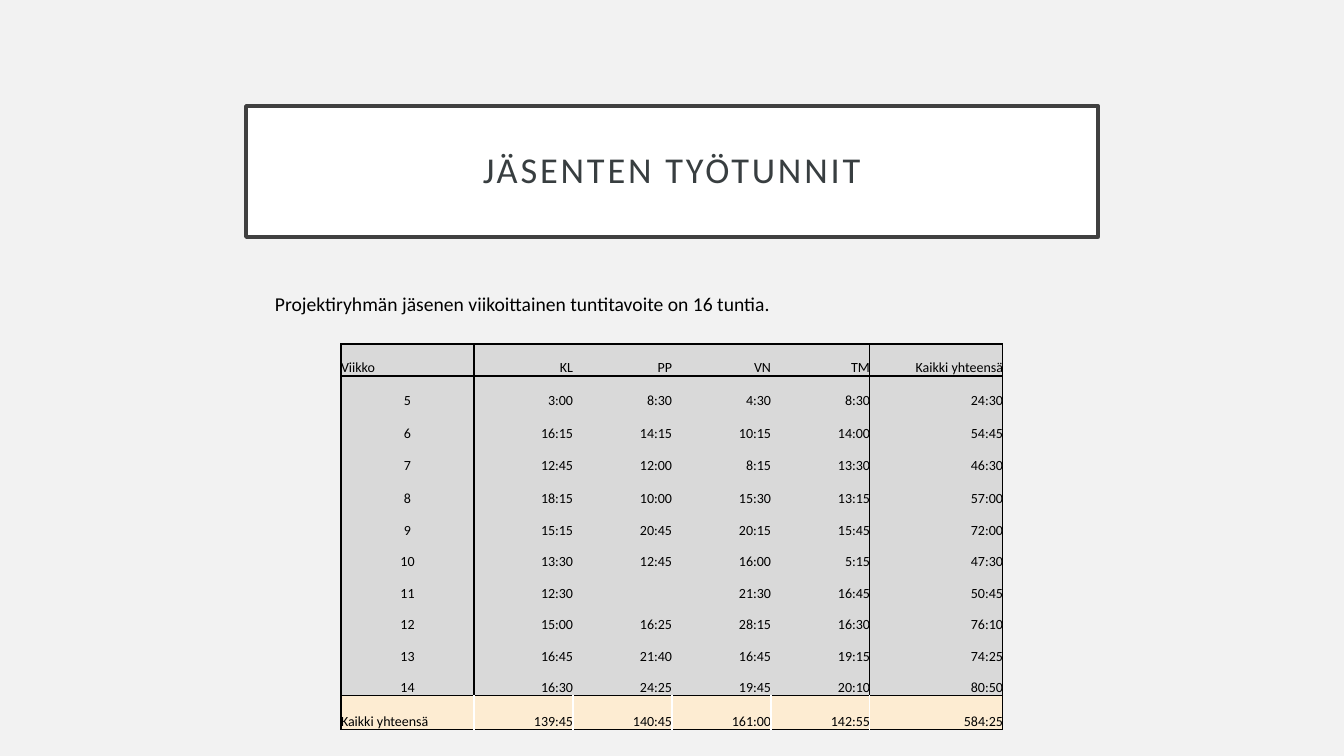
from lxml import etree
from pptx import Presentation
from pptx.dml.color import RGBColor
from pptx.enum.shapes import MSO_SHAPE
from pptx.enum.text import MSO_ANCHOR, PP_ALIGN
from pptx.oxml.ns import qn
from pptx.util import Pt

RECTANGLE = MSO_SHAPE.RECTANGLE
MIDDLE, BOTTOM = MSO_ANCHOR.MIDDLE, MSO_ANCHOR.BOTTOM
LEFT, CENTER, RIGHT = PP_ALIGN.LEFT, PP_ALIGN.CENTER, PP_ALIGN.RIGHT

SLIDE_WIDTH, SLIDE_HEIGHT = 1344, 756
EMU_PER_PX = 12192000 / SLIDE_WIDTH
FONT = "Calibri"
BLACK, WHITE = "000000", "FFFFFF"
BACKGROUND, FRAME, TITLE_TEXT = "F2F2F2", "404040", "383E40"
WEEK_FILL, TOTAL_FILL = "D9D9D9", "FDECD2"

COLUMN_WIDTHS = [133, 99, 99, 99, 99, 133]
ROW_HEIGHTS = [32, 33, 33, 32, 33, 32, 31, 32, 31, 32, 31, 34]
HOURS = [
    ["Viikko", "KL", "PP", "VN", "TM", "Kaikki yhteensä"],
    ["5", "3:00", "8:30", "4:30", "8:30", "24:30"],
    ["6", "16:15", "14:15", "10:15", "14:00", "54:45"],
    ["7", "12:45", "12:00", "8:15", "13:30", "46:30"],
    ["8", "18:15", "10:00", "15:30", "13:15", "57:00"],
    ["9", "15:15", "20:45", "20:15", "15:45", "72:00"],
    ["10", "13:30", "12:45", "16:00", "5:15", "47:30"],
    ["11", "12:30", "", "21:30", "16:45", "50:45"],
    ["12", "15:00", "16:25", "28:15", "16:30", "76:10"],
    ["13", "16:45", "21:40", "16:45", "19:15", "74:25"],
    ["14", "16:30", "24:25", "19:45", "20:10", "80:50"],
    ["Kaikki yhteensä", "139:45", "140:45", "161:00", "142:55", "584:25"],
]
LAST_ROW, LAST_COLUMN = len(HOURS) - 1, len(COLUMN_WIDTHS) - 1


def px(length):
    return round(length * EMU_PER_PX)


def color(value):
    return RGBColor.from_string(value)


def write(paragraph, text, size, text_color, alignment):
    paragraph.text = text
    paragraph.alignment = alignment
    paragraph.font.name = FONT
    paragraph.font.size = Pt(size)
    paragraph.font.color.rgb = color(text_color)


def add_title(slide, left, top, width, height):
    shape = slide.shapes.add_shape(RECTANGLE, px(left), px(top), px(width), px(height))
    shape.shadow.inherit = False
    shape.fill.solid()
    shape.fill.fore_color.rgb = color(WHITE)
    shape.line.color.rgb = color(FRAME)
    shape.line.width = Pt(2.5)
    frame = shape.text_frame
    frame.word_wrap = True
    frame.vertical_anchor = MIDDLE
    frame.margin_left = frame.margin_right = px(20)
    frame.margin_top = frame.margin_bottom = px(20)
    paragraph = frame.paragraphs[0]
    write(paragraph, "JÄSENTEN TYÖTUNNIT", 26, TITLE_TEXT, CENTER)
    paragraph.line_spacing = 0.9
    # Letter spacing of 2 pt
    paragraph.runs[0]._r.get_or_add_rPr().set("spc", "200")


def add_goal(slide, left, top, width, height):
    box = slide.shapes.add_textbox(px(left), px(top), px(width), px(height))
    box.text_frame.word_wrap = True
    goal = "Projektiryhmän jäsenen viikoittainen tuntitavoite on 16 tuntia."
    write(box.text_frame.paragraphs[0], goal, 14, BLACK, LEFT)


def border_colors(row, column):
    """Black frame and group dividers; white dividers between the totals."""
    left = BLACK if column in (0, 1, LAST_COLUMN) else None
    right = BLACK if column in (0, LAST_COLUMN - 1, LAST_COLUMN) else None
    if row == LAST_ROW:
        left = BLACK if column == 0 else WHITE
        right = BLACK if column == LAST_COLUMN else WHITE
    top = BLACK if row in (0, 1, LAST_ROW) else None
    bottom = BLACK if row in (0, LAST_ROW - 1, LAST_ROW) else None
    return {"a:lnL": left, "a:lnR": right, "a:lnT": top, "a:lnB": bottom}


def set_borders(cell, borders):
    properties = cell._tc.get_or_add_tcPr()
    for tag, line_color in borders.items():
        line = etree.SubElement(properties, qn(tag), w=str(Pt(1)))
        if line_color:
            fill = etree.SubElement(line, qn("a:solidFill"))
            etree.SubElement(fill, qn("a:srgbClr"), val=line_color)
        else:
            etree.SubElement(line, qn("a:noFill"))


def cell_alignment(row, column):
    if column > 0:
        return RIGHT
    return LEFT if row in (0, LAST_ROW) else CENTER


def add_hours_table(slide, left, top):
    table = slide.shapes.add_table(
        len(HOURS), len(COLUMN_WIDTHS), px(left), px(top),
        px(sum(COLUMN_WIDTHS)), px(sum(ROW_HEIGHTS))).table
    table.first_row = table.horz_banding = False
    for column, width in zip(table.columns, COLUMN_WIDTHS):
        column.width = px(width)
    for row, height in zip(table.rows, ROW_HEIGHTS):
        row.height = px(height)
    for row, values in enumerate(HOURS):
        for column, value in enumerate(values):
            cell = table.cell(row, column)
            cell.margin_left = cell.margin_right = 0
            cell.margin_top = cell.margin_bottom = 0
            cell.vertical_anchor = BOTTOM
            set_borders(cell, border_colors(row, column))
            cell.fill.solid()
            cell.fill.fore_color.rgb = color(TOTAL_FILL if row == LAST_ROW else WEEK_FILL)
            write(cell.text_frame.paragraphs[0], value, 10, BLACK,
                  cell_alignment(row, column))


def main():
    presentation = Presentation()
    presentation.slide_width = px(SLIDE_WIDTH)
    presentation.slide_height = px(SLIDE_HEIGHT)
    slide = presentation.slides.add_slide(presentation.slide_layouts[6])
    slide.background.fill.solid()
    slide.background.fill.fore_color.rgb = color(BACKGROUND)
    add_title(slide, 246, 106, 852, 131)
    add_goal(slide, 265, 287, 765, 34)
    add_hours_table(slide, 341, 344)
    presentation.save("out.pptx")


if __name__ == "__main__":
    main()
